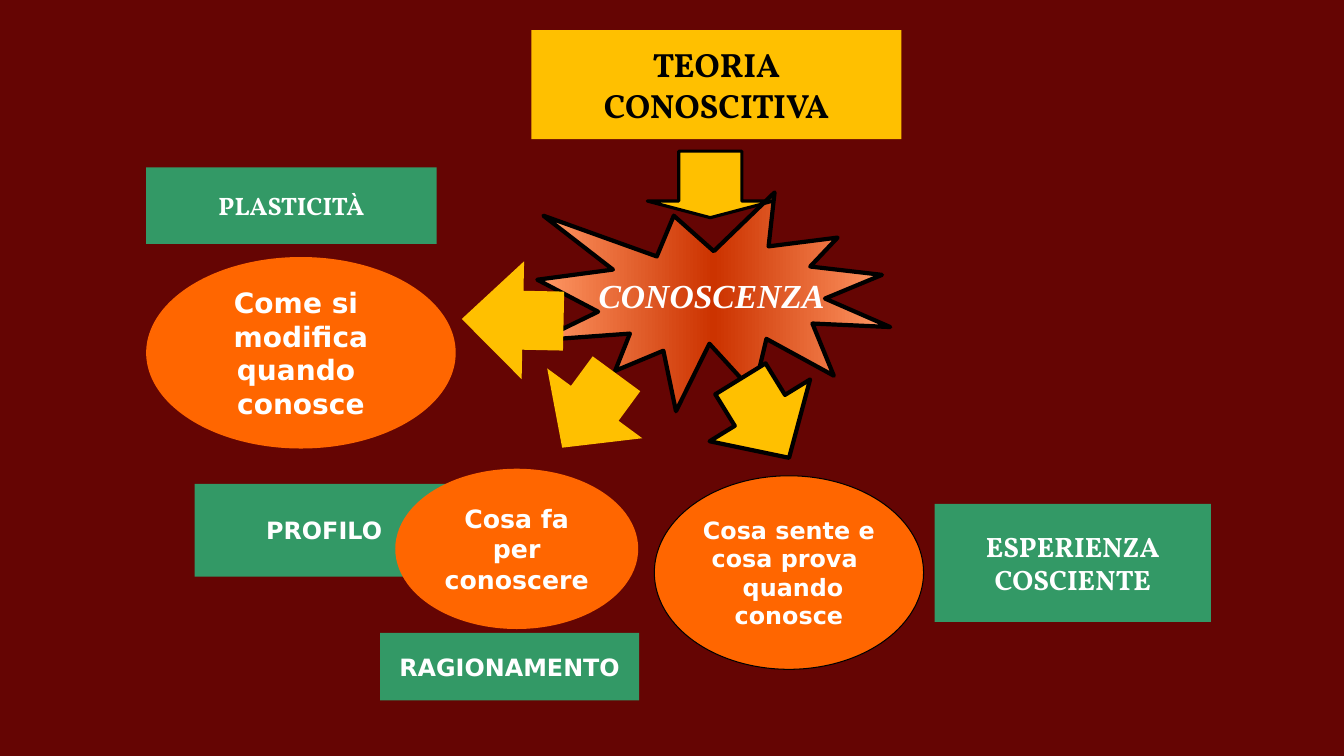
from copy import deepcopy
from dataclasses import dataclass
from typing import Optional

from pptx import Presentation
from pptx import util as u
from pptx.dml.color import RGBColor
from pptx.enum import shapes, text

MAROON = RGBColor(0x65, 0x05, 0x03)
GREEN = RGBColor(0x33, 0x99, 0x66)
ORANGE = RGBColor(0xFF, 0x66, 0x00)
AMBER = RGBColor(0xFF, 0xC0, 0x00)
PEACH = RGBColor(0xFF, 0x99, 0x66)
RUST = RGBColor(0xCC, 0x33, 0x00)
WHITE = RGBColor(0xFF, 0xFF, 0xFF)
BLACK = RGBColor(0x00, 0x00, 0x00)

SANS = "DejaVu Sans"
SERIF = "Vollkorn"
ROMAN = "Times New Roman"

RECTANGLE = shapes.MSO_SHAPE.RECTANGLE
OVAL = shapes.MSO_SHAPE.OVAL
BURST = shapes.MSO_SHAPE.EXPLOSION1


@dataclass(frozen=True)
class Concept:
    kind: shapes.MSO_SHAPE
    box: tuple[float, float, float, float]
    lines: tuple[str, ...]
    size: float
    font: str = SANS
    fill: Optional[RGBColor] = GREEN
    outline: float = 0
    italic: bool = False


@dataclass(frozen=True)
class Arrow:
    box: tuple[float, float, float, float]
    rotation: float = 0
    head: float = 0.6
    outline: float = 0


PROFILE = Concept(RECTANGLE, (1.93, 4.8, 2.57, 0.92), ("PROFILO",), 17)
KNOWLEDGE = Concept(BURST, (5.33, 1.91, 3.5, 2.17), ("CONOSCENZA",), 24, ROMAN,
                    fill=None, outline=3, italic=True)
TO_ACTION = Arrow((5.26, 3.62, 1.17, 0.91), 36.3)
EXPERIENCE = Concept(RECTANGLE, (9.27, 5, 2.74, 1.17), ("ESPERIENZA", "COSCIENTE"), 20, SERIF)
REASONING = Concept(RECTANGLE, (3.77, 6.28, 2.57, 0.67), ("RAGIONAMENTO",), 17)
ACTION = Concept(OVAL, (3.92, 4.65, 2.41, 1.59), ("Cosa fa", " per ", "conoscere"), 18,
                 fill=ORANGE)
FEELING = Concept(OVAL, (6.49, 4.72, 2.67, 1.92),
                  ("Cosa sente e", "cosa prova ", " quando", "conosce"), 17,
                  fill=ORANGE, outline=0.75)
PLASTICITY = Concept(RECTANGLE, (1.45, 1.66, 2.88, 0.76), ("PLASTICITÀ",), 18, SERIF)
CHANGE = Concept(OVAL, (1.45, 2.55, 3.07, 1.9),
                 ("Come si ", "modifica", "quando ", "conosce"), 20, fill=ORANGE)
TO_FEELING = Arrow((7, 3.69, 1.17, 0.92), 328.4, outline=3)
TO_CHANGE = Arrow((4.5, 2.67, 1.17, 1.01), 91.2)
TO_KNOWLEDGE = Arrow((6.42, 1.5, 1.25, 0.66), head=0.25, outline=2.25)

DIAGRAM = (PROFILE, KNOWLEDGE, TO_ACTION, EXPERIENCE, REASONING, ACTION, FEELING,
           PLASTICITY, CHANGE, TO_FEELING, TO_CHANGE, TO_KNOWLEDGE)


def write_lines(shape, lines: tuple[str, ...], font: str, size: float,
                color: RGBColor, italic: bool = False) -> None:
    frame = shape.text_frame
    frame.word_wrap = False
    frame.auto_size = text.MSO_AUTO_SIZE.NONE
    frame.vertical_anchor = text.MSO_ANCHOR.MIDDLE
    for index, line in enumerate(lines):
        paragraph = frame.add_paragraph() if index else frame.paragraphs[0]
        paragraph.alignment = text.PP_ALIGN.CENTER
        run = paragraph.add_run()
        run.text = line
        run.font.name = font
        run.font.size = u.Pt(size)
        run.font.bold = True
        run.font.italic = italic
        run.font.color.rgb = color


def paint(shape, fill: RGBColor, outline: float) -> None:
    shape.fill.solid()
    shape.fill.fore_color.rgb = fill
    if outline:
        shape.line.color.rgb = BLACK
        shape.line.width = u.Pt(outline)
    else:
        shape.line.fill.background()


def paint_glow(shape) -> None:
    shape.fill.gradient()
    shape.fill.gradient_angle = 0
    stops = shape.fill.gradient_stops
    stops[0].color.rgb = PEACH
    stops[1].color.rgb = PEACH
    first = shape.fill._fill._gradFill.gsLst[0]
    first.addnext(deepcopy(first))
    middle = shape.fill.gradient_stops[1]
    middle.position = 0.5
    middle.color.rgb = RUST


def draw_concept(slide, concept: Concept) -> None:
    shape = slide.shapes.add_shape(concept.kind, *map(u.Inches, concept.box))
    shape.shadow.inherit = False
    paint(shape, concept.fill or RUST, concept.outline)
    if concept.fill is None:
        paint_glow(shape)
    write_lines(shape, concept.lines, concept.font, concept.size, WHITE, concept.italic)


def draw_arrow(slide, arrow: Arrow) -> None:
    shape = slide.shapes.add_shape(shapes.MSO_SHAPE.DOWN_ARROW, *map(u.Inches, arrow.box))
    shape.shadow.inherit = False
    shape.adjustments[0] = 0.5
    shape.adjustments[1] = arrow.head
    shape.rotation = arrow.rotation
    paint(shape, AMBER, arrow.outline)


def draw_title(slide) -> None:
    title = slide.shapes.title
    title.left, title.top, title.width, title.height = map(u.Inches, (5.27, 0.3, 3.67, 1.08))
    paint(title, AMBER, 0)
    write_lines(title, ("TEORIA", "CONOSCITIVA"), SERIF, 24, BLACK)


def main() -> None:
    deck = Presentation()
    deck.slide_width = u.Inches(13.33)
    deck.slide_height = u.Inches(7.5)
    slide = deck.slides.add_slide(deck.slide_layouts.get_by_name("Title Only"))
    slide.background.fill.solid()
    slide.background.fill.fore_color.rgb = MAROON
    draw_title(slide)
    for part in DIAGRAM:
        if isinstance(part, Arrow):
            draw_arrow(slide, part)
        else:
            draw_concept(slide, part)
    deck.save("out.pptx")


if __name__ == "__main__":
    main()
